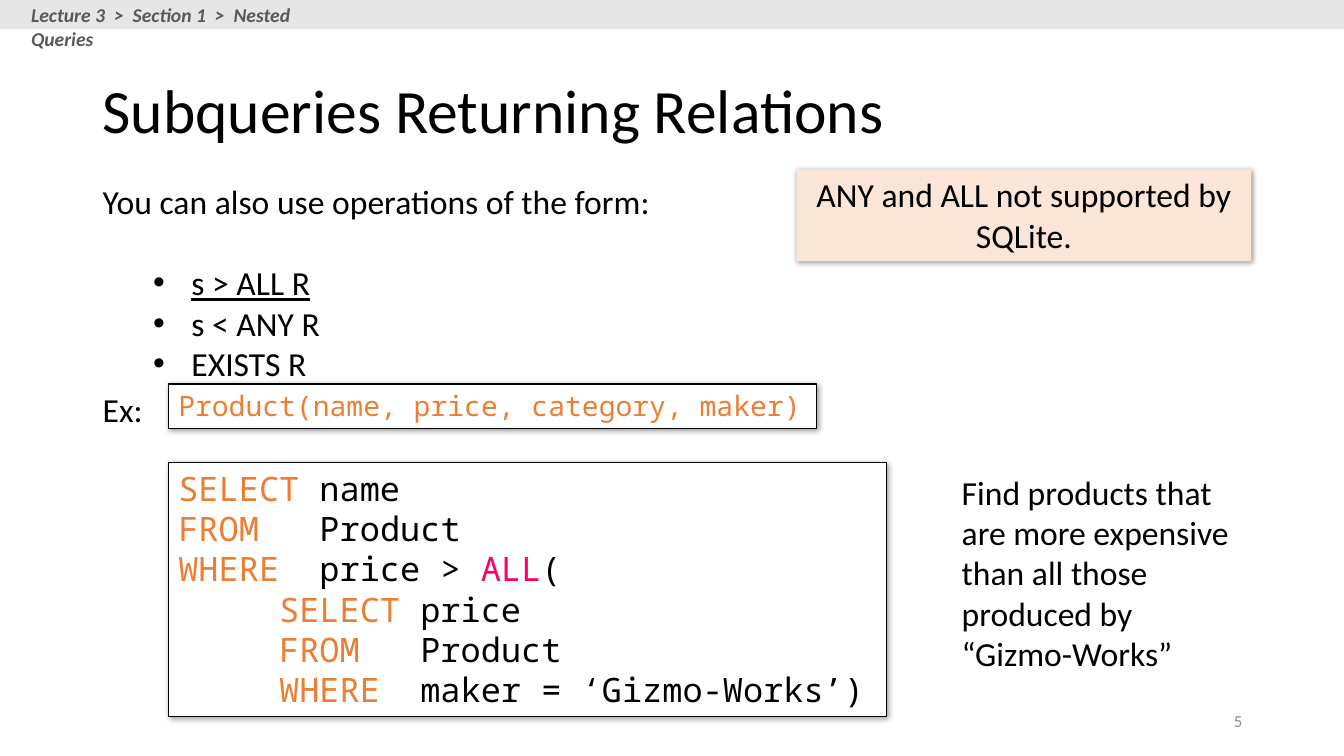
from lxml import etree
from pptx import Presentation
from pptx.dml.color import RGBColor
from pptx.enum import shapes, text
from pptx.oxml.ns import qn
from pptx.util import Inches, Pt

COLORS = {"black": "000000", "white": "FFFFFF", "keyword": "ED7D31",
          "operator": "FF0066", "bar": "E7E6E6", "crumb": "595959",
          "number": "8C8C8C", "note": "FBE5D6"}
CODE_FONT = "Noto Sans Mono"

# A paragraph is a list of (text, color) spans.
TITLE = "Subqueries Returning Relations"
BREADCRUMB = "Lecture 3  >  Section 1  >  Nested Queries"
INTRO = "You can also use operations of the form:"
OPERATIONS = ["s > ALL R", "s < ANY R", "EXISTS R"]
NOTE = "ANY and ALL not supported by SQLite."
TASK = "Find products that are more expensive than all those produced by “Gizmo-Works”"
SCHEMA = "Product(name, price, category, maker)"
OUTER_QUERY = [
    [("SELECT", "keyword"), (" name", "black")],
    [("FROM", "keyword"), ("   Product", "black")],
    [("WHERE", "keyword"), ("  price > ", "black"), ("ALL", "operator"), ("(", "black")],
]
INNER_QUERY = [
    [("SELECT", "keyword"), (" price", "black")],
    [("FROM", "keyword"), ("   Product", "black")],
    [("WHERE", "keyword"), ("  maker = ‘Gizmo-Works’)", "black")],
]


def rgb(name):
    return RGBColor.from_string(COLORS[name])


def add_panel(page, at, fill, line=None, shadow=True):
    panel = page.shapes.add_shape(shapes.MSO_SHAPE.RECTANGLE, *map(Inches, at))
    panel.shadow.inherit = False
    panel.fill.solid()
    panel.fill.fore_color.rgb = rgb(fill)
    if line:
        panel.line.color.rgb = rgb(line)
        panel.line.width = Pt(0.75)
    else:
        panel.line.fill.background()
    if shadow:
        effects = panel._element.spPr.find(qn("a:effectLst"))
        outer = etree.SubElement(effects, qn("a:outerShdw"), blurRad=str(Pt(4)),
                                 dist=str(Pt(1)), dir=str(45 * 60000),
                                 algn="tl", rotWithShape="0")
        tint = etree.SubElement(outer, qn("a:srgbClr"), val=COLORS["black"])
        etree.SubElement(tint, qn("a:alpha"), val="40000")
    return panel


def add_box(page, at):
    return page.shapes.add_textbox(*map(Inches, at))


def write(box, paragraphs, size=24, font="Calibri", color="black", bold=False,
          italic=False, align="LEFT", anchor="TOP", spacing=None):
    """Fill a shape with paragraphs, each a string or a list of spans."""
    frame = box.text_frame
    frame.word_wrap = True
    frame.vertical_anchor = getattr(text.MSO_ANCHOR, anchor)
    for index, content in enumerate(paragraphs):
        para = frame.add_paragraph() if index else frame.paragraphs[0]
        para.alignment = getattr(text.PP_ALIGN, align)
        if spacing:
            para.line_spacing = spacing
        spans = [(content, color)] if isinstance(content, str) else content
        for words, span_color in spans:
            span = para.add_run()
            span.text = words
            span.font.name = font
            span.font.size = Pt(size)
            span.font.bold = bold
            span.font.italic = italic
            span.font.color.rgb = rgb(span_color)
    return frame.paragraphs


def indent(para, left, first=0, bullet=None):
    props = para._p.get_or_add_pPr()
    props.set("marL", str(Inches(left)))
    props.set("indent", str(Inches(first)))
    if bullet:
        etree.SubElement(props, qn("a:buFont"), typeface="Arial")
        etree.SubElement(props, qn("a:buChar"), char=bullet)


def main():
    deck = Presentation()
    deck.slide_width, deck.slide_height = Inches(13.33), Inches(7.5)
    page = deck.slides.add_slide(deck.slide_layouts[6])

    write(add_box(page, (9.42, 6.95, 3, 0.4)), ["5"], size=12, color="number",
          align="RIGHT", anchor="MIDDLE")
    write(add_box(page, (0.92, 0.4, 11.5, 1.45)), [TITLE], size=44,
          anchor="MIDDLE", spacing=0.9)

    query = write(add_panel(page, (1.67, 4.59, 7.12, 2.52), "white", "black"),
                  OUTER_QUERY + INNER_QUERY, font=CODE_FONT)
    for para in query[len(OUTER_QUERY):]:
        indent(para, 1)
    write(add_panel(page, (1.67, 3.81, 6.43, 0.44), "white", "black"), [SCHEMA],
          size=20, font=CODE_FONT, color="keyword")

    operations = write(add_box(page, (0.92, 1.75, 5.72, 2.1)), [INTRO] + OPERATIONS)[1:]
    operations[0].space_before = Pt(29)
    operations[0].runs[0].font.underline = True
    for para in operations:
        indent(para, 0.88, -0.38, "•")

    add_panel(page, (0, 0, 13.33, 0.29), "bar", shadow=False)
    write(add_box(page, (0.21, -0.02, 3.38, 0.34)), [BREADCRUMB], size=14,
          color="crumb", bold=True, italic=True)

    write(add_box(page, (9.44, 4.63, 2.95, 2.12)), [TASK])
    write(add_box(page, (0.92, 3.81, 0.75, 0.5)), ["Ex:"])
    write(add_panel(page, (7.9, 1.68, 4.51, 0.91), "note"), [NOTE], align="CENTER")

    deck.save("out.pptx")


if __name__ == "__main__":
    main()
